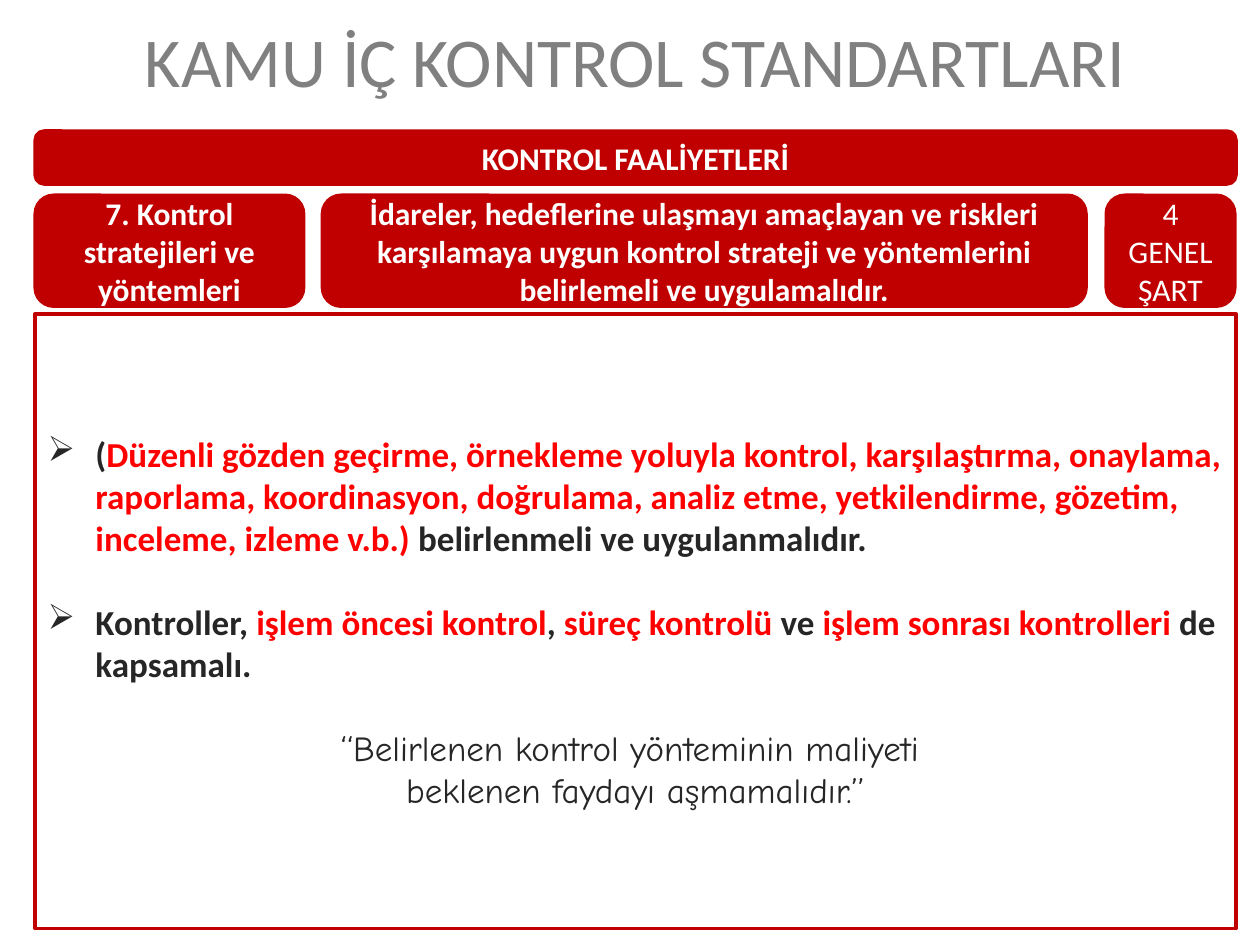
from lxml import etree
from pptx import Presentation
from pptx.dml.color import RGBColor
from pptx.enum.shapes import MSO_SHAPE
from pptx.enum.text import MSO_ANCHOR, PP_ALIGN
from pptx.oxml.ns import qn
from pptx.util import Inches, Pt

ROUND, RECT = MSO_SHAPE.ROUNDED_RECTANGLE, MSO_SHAPE.RECTANGLE
MIDDLE = MSO_ANCHOR.MIDDLE
CENTER, LEFT = PP_ALIGN.CENTER, PP_ALIGN.LEFT
GRAY = RGBColor(0x80, 0x80, 0x80)
WINE = RGBColor(0xC0, 0x00, 0x00)
RED = RGBColor(0xFF, 0x00, 0x00)
DARK = RGBColor(0x26, 0x26, 0x26)
WHITE = RGBColor(0xFF, 0xFF, 0xFF)

RULES = [
    [("(", DARK),
     ("Düzenli gözden geçirme, örnekleme yoluyla kontrol, karşılaştırma, "
      "onaylama, raporlama, koordinasyon, doğrulama, analiz etme, "
      "yetkilendirme, gözetim, inceleme, izleme v.b.) ", RED),
     ("belirlenmeli ve uygulanmalıdır.", DARK)],
    [("Kontroller, ", DARK), ("işlem öncesi kontrol", RED), (", ", DARK),
     ("süreç kontrolü ", RED), ("ve ", DARK),
     ("işlem sonrası kontrolleri ", RED), ("de kapsamalı.", DARK)],
]
QUOTE = ["‘‘Belirlenen kontrol yönteminin maliyeti ",
         "beklenen faydayı aşmamalıdır.’’"]
CARDS = [
    (0.28, 2.13, "7. Kontrol stratejileri ve yöntemleri", True),
    (2.56, 6.06, "İdareler, hedeflerine ulaşmayı amaçlayan ve riskleri "
     "karşılamaya uygun kontrol strateji ve yöntemlerini belirlemeli ve "
     "uygulamalıdır.", True),
    (8.78, 1.02, "4 GENEL ŞART", False),
]


class Deck:
    """Holds the style and the current slide."""

    def __init__(self):
        self.font, self.hand = "Calibri", "Comic Neue"
        self.show = Presentation()
        self.show.slide_width, self.show.slide_height = Inches(10), Inches(7.5)
        self.slide = self.show.slides.add_slide(self.show.slide_layouts[5])

    def style(self, run, size, color, bold=False, name=None):
        font = run.font
        font.name, font.size, font.bold = name or self.font, Pt(size), bold
        font.color.rgb = color

    def title(self, text, left, top, width, height):
        shape = self.slide.shapes.title
        shape.left, shape.top = Inches(left), Inches(top)
        shape.width, shape.height = Inches(width), Inches(height)
        frame = shape.text_frame
        frame.text, frame.vertical_anchor = text, MIDDLE
        frame.paragraphs[0].alignment = CENTER
        self.style(frame.paragraphs[0].runs[0], 40, GRAY)

    def box(self, kind, left, top, width, height, fill):
        shape = self.slide.shapes.add_shape(
            kind, Inches(left), Inches(top), Inches(width), Inches(height))
        shape.shadow.inherit = False
        shape.fill.solid()
        shape.fill.fore_color.rgb = fill
        shape.line.color.rgb, shape.line.width = WINE, Pt(2)
        frame = shape.text_frame
        frame.word_wrap, frame.vertical_anchor = True, MIDDLE
        return frame

    def card(self, text, left, top, width, height, bold=True):
        frame = self.box(ROUND, left, top, width, height, WINE)
        frame.text = text
        frame.paragraphs[0].alignment = CENTER
        self.style(frame.paragraphs[0].runs[0], 18, WHITE, bold)

    def line(self, frame, parts, first, gap, bullet):
        para = frame.paragraphs[0] if first else frame.add_paragraph()
        para.alignment = LEFT if bullet else CENTER
        if bullet:
            props = para._p.get_or_add_pPr()
            props.set("marL", str(Inches(0.38)))
            props.set("indent", str(Inches(-0.38)))
            etree.SubElement(props, qn("a:buChar")).set("char", "➢")
        if gap:
            para.space_before = Pt(24)
        for text, color in parts:
            run = para.add_run()
            run.text = text
            self.style(run, 20, color, bullet, None if bullet else self.hand)

    def panel(self, left, top, width, height):
        frame = self.box(RECT, left, top, width, height, WHITE)
        for i, parts in enumerate(RULES):
            self.line(frame, parts, i == 0, i > 0, True)
        for i, text in enumerate(QUOTE):
            self.line(frame, [(text, DARK)], False, i == 0, False)


def main():
    deck = Deck()
    deck.title("KAMU İÇ KONTROL STANDARTLARI", 0.14, 0, 9.8, 0.94)
    deck.card("KONTROL FAALİYETLERİ", 0.28, 1.04, 9.53, 0.42)
    for left, width, text, bold in CARDS:
        deck.card(text, left, 1.55, width, 0.88, bold)
    deck.panel(0.28, 2.49, 9.53, 4.88)
    deck.show.save("out.pptx")


if __name__ == "__main__":
    main()
